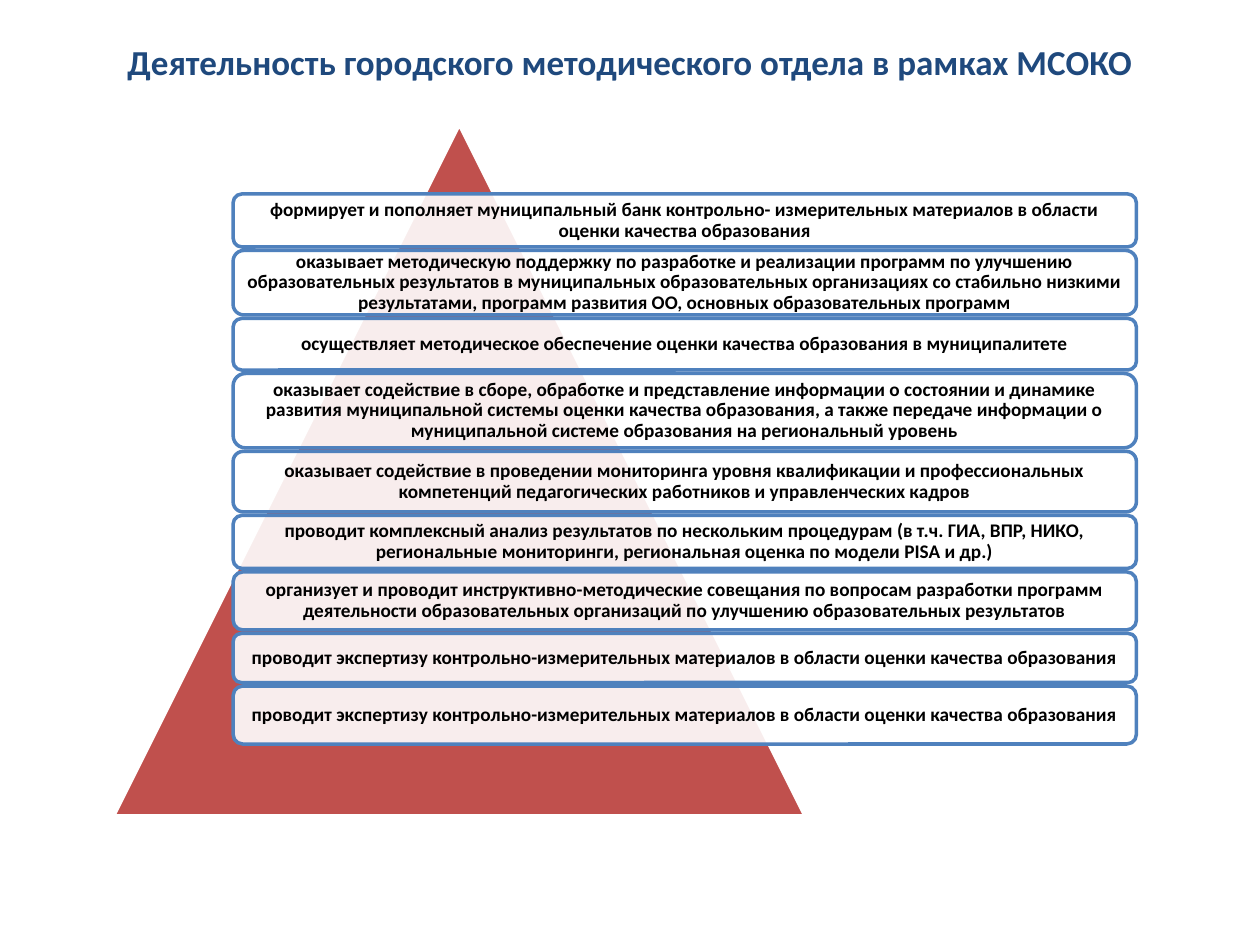
import pptx
import pptx.util
import pptx.dml.color
import pptx.enum.shapes
import pptx.enum.text
import pptx.oxml
import pptx.oxml.ns

Cm, Pt = pptx.util.Cm, pptx.util.Pt
SHAPE = pptx.enum.shapes.MSO_SHAPE

# Content
TITLE = "Деятельность городского методического отдела в рамках МСОКО"
EXPERTISE = (
    "проводит экспертизу контрольно-измерительных материалов "
    "в области оценки качества образования"
)
# Activities from top to bottom: (height in cm, text)
ACTIVITIES = [
    (1.07, "формирует и пополняет муниципальный банк контрольно- измерительных "
           "материалов в области оценки качества образования"),
    (1.3, "оказывает методическую поддержку по разработке и реализации программ "
          "по улучшению образовательных результатов в муниципальных "
          "образовательных организациях со стабильно низкими результатами, "
          "программ развития ОО, основных образовательных программ"),
    (1.04, "осуществляет методическое обеспечение оценки качества образования "
           "в муниципалитете"),
    (1.5, "оказывает содействие в сборе, обработке и представление информации "
          "о состоянии и динамике развития муниципальной системы оценки качества "
          "образования, а также передаче информации о муниципальной системе "
          "образования на региональный уровень"),
    (1.22, "оказывает содействие в проведении мониторинга уровня квалификации "
           "и профессиональных компетенций педагогических работников "
           "и управленческих кадров"),
    (1.07, "проводит комплексный анализ результатов по нескольким процедурам "
           "(в т.ч. ГИА, ВПР, НИКО, региональные мониторинги, региональная "
           "оценка по модели PISA и др.)"),
    (1.17, "организует и проводит инструктивно-методические совещания по вопросам "
           "разработки программ деятельности образовательных организаций "
           "по улучшению образовательных результатов"),
    (0.99, EXPERTISE),
    (1.17, EXPERTISE),
]

COLORS = {
    "title": "1F497D",
    "pyramid": "C0504D",
    "border": "4F81BD",
    "white": "FFFFFF",
    "text": "000000",
}

# Layout in centimetres
TITLE_BOX = (1.27, 0.76, 22.86, 0.97)
PYRAMID_BOX = (2.29, 2.51, 13.94, 13.94)
LIST_LEFT, LIST_TOP, LIST_WIDTH = 4.7, 3.91, 18.21
GAP = 0.07
INSET = 0.13


def rgb(name):
    return pptx.dml.color.RGBColor.from_string(COLORS[name])


def write_text(shape, text, *, size, color, spacing=1.0, inset=INSET):
    frame = shape.text_frame
    frame.word_wrap = True
    frame.vertical_anchor = pptx.enum.text.MSO_ANCHOR.MIDDLE
    frame.margin_left = frame.margin_right = Cm(inset)
    frame.margin_top = frame.margin_bottom = Cm(inset)
    paragraph = frame.paragraphs[0]
    paragraph.alignment = pptx.enum.text.PP_ALIGN.CENTER
    paragraph.line_spacing = spacing
    run = paragraph.add_run()
    run.text = text
    run.font.name = "Calibri"
    run.font.size = Pt(size)
    run.font.bold = True
    run.font.color.rgb = rgb(color)


def add_shape(shapes, kind, box, fill, line, opacity=100):
    shape = shapes.add_shape(kind, *map(Cm, box))
    shape.shadow.inherit = False
    shape.fill.solid()
    shape.fill.fore_color.rgb = rgb(fill)
    shape.line.color.rgb = rgb(line)
    shape.line.width = Pt(2)
    if opacity < 100:
        color = shape.fill._xPr.find(".//" + pptx.oxml.ns.qn("a:srgbClr"))
        alpha = pptx.oxml.parse_xml(
            f'<a:alpha {pptx.oxml.ns.nsdecls("a")} val="{opacity * 1000}"/>'
        )
        color.append(alpha)
    return shape


def main():
    presentation = pptx.Presentation()
    presentation.slide_width = Cm(25.4)
    presentation.slide_height = Cm(19.05)
    slide = presentation.slides.add_slide(presentation.slide_layouts[6])

    # Title
    title = slide.shapes.add_textbox(*map(Cm, TITLE_BOX))
    write_text(title, TITLE, size=20, color="title")

    # Pyramid behind the list
    diagram = slide.shapes.add_group_shape()
    add_shape(diagram.shapes, SHAPE.ISOSCELES_TRIANGLE, PYRAMID_BOX, "pyramid", "white")

    # Stack of activities with equal gaps
    top = LIST_TOP
    for height, text in ACTIVITIES:
        box = (LIST_LEFT, top, LIST_WIDTH, height)
        card = add_shape(diagram.shapes, SHAPE.ROUNDED_RECTANGLE, box,
                         "white", "border", opacity=90)
        write_text(card, text, size=11, color="text", spacing=0.9)
        top += height + GAP

    presentation.save("out.pptx")


if __name__ == "__main__":
    main()
